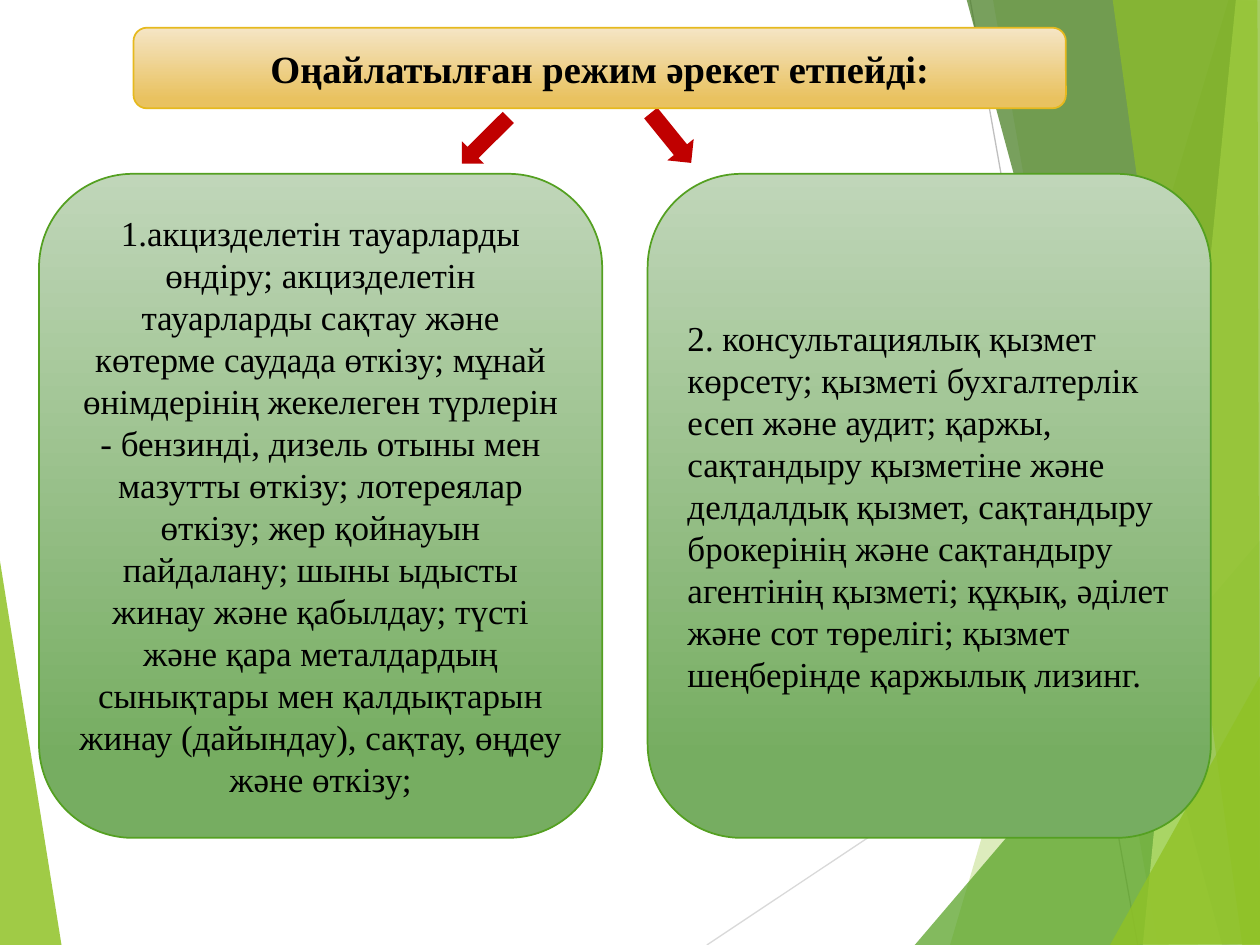
import lxml.etree
import pptx
import pptx.dml.color
import pptx.enum.shapes
import pptx.enum.text
import pptx.oxml.ns
import pptx.util

Inches = pptx.util.Inches
RGBColor = pptx.dml.color.RGBColor
Shape = pptx.enum.shapes.MSO_SHAPE
Align = pptx.enum.text.PP_ALIGN

LIME = RGBColor(0x90, 0xC2, 0x26)
PALE_LIME = RGBColor(0xC0, 0xE4, 0x74)
GREEN = RGBColor(0x54, 0xA0, 0x21)
DARK_GREEN = RGBColor(0x3F, 0x78, 0x19)
LIGHT_GREY = RGBColor(0xD9, 0xD9, 0xD9)
GREY = RGBColor(0xBF, 0xBF, 0xBF)
PANEL_TOP = RGBColor(0xC0, 0xD6, 0xB9)
PANEL_BOTTOM = RGBColor(0x76, 0xAD, 0x61)
HEADER_TOP = RGBColor(0xF5, 0xE5, 0xC5)
HEADER_BOTTOM = RGBColor(0xE9, 0xC2, 0x60)
GOLD = RGBColor(0xE6, 0xB9, 0x1E)
RED = RGBColor(0xC0, 0x00, 0x00)
BLACK = RGBColor(0x00, 0x00, 0x00)
FONT = "Times New Roman"

TITLE = "Оңайлатылған режим әрекет етпейді:"
GOODS = (
    "1.акцизделетін тауарларды өндіру; акцизделетін тауарларды сақтау және "
    "көтерме саудада өткізу; мұнай өнімдерінің жекелеген түрлерін - бензинді, "
    "дизель отыны мен мазутты өткізу; лотереялар өткізу; жер қойнауын "
    "пайдалану; шыны ыдысты жинау және қабылдау; түсті және қара металдардың "
    "сынықтары мен қалдықтарын жинау (дайындау), сақтау, өңдеу және өткізу;"
)
SERVICES = (
    "2. консультациялық қызмет көрсету; қызметі бухгалтерлік есеп және аудит; "
    "қаржы, сақтандыру қызметіне және делдалдық қызмет, сақтандыру брокерінің "
    "және сақтандыру агентінің қызметі; құқық, әділет және сот төрелігі; "
    "қызмет шеңберінде қаржылық лизинг."
)

RAYS = [
    ((5.61, 7.5), (10.01, 4.57), LIGHT_GREY),
    ((7.7, 0), (9.03, 7.5), GREY),
]
LEFT_FACET = ([(-0.01, 4.39), (0.49, 7.51), (-0.01, 7.5)], LIME, 85)
RIGHT_FACETS = [
    ([(9.75, 0), (7.54, 7.5), (10.02, 7.51), (10.01, 0.01)], LIME, 30),
    ([(7.88, -0.01), (9.19, 7.5), (10.01, 7.5), (10.01, -0.01)], LIME, 20),
    ([(7.26, 7.5), (10, 4.29), (10.01, 7.5)], GREEN, 72),
    ([(7.67, -0.01), (9.7, 7.5), (10.01, 7.49), (10.01, -0.01)], DARK_GREEN, 70),
    ([(9.81, -0.01), (9.07, 7.5), (10.01, 7.5), (10, -0.01)], PALE_LIME, 70),
    ([(8.83, -0.01), (9.86, 7.5), (10, 7.5), (9.98, -0.01)], LIME, 65),
    ([(8.81, 7.5), (10.01, 5.35), (10.01, 7.49)], LIME, 80),
]


def add_facet(slide, left, top, points, color, opacity):
    """Draw one translucent polygon with points in inches from the given corner."""
    corners = [(Inches(left + x), Inches(top + y)) for x, y in points]
    builder = slide.shapes.build_freeform(*corners[0])
    builder.add_line_segments(corners[1:], close=True)
    facet = builder.convert_to_shape()
    facet.shadow.inherit = False
    facet.line.fill.background()
    facet.fill.solid()
    facet.fill.fore_color.rgb = color
    color_element = facet.fill._xPr.find(".//" + pptx.oxml.ns.qn("a:srgbClr"))
    alpha = lxml.etree.SubElement(color_element, pptx.oxml.ns.qn("a:alpha"))
    alpha.set("val", str(opacity * 1000))


def add_ray(slide, left, top, start, end, color):
    """Draw one thin background line."""
    ray = slide.shapes.add_connector(
        pptx.enum.shapes.MSO_CONNECTOR.STRAIGHT,
        *(Inches(value) for value in (
            left + start[0], top + start[1], left + end[0], top + end[1])),
    )
    ray.line.color.rgb = color
    ray.line.width = pptx.util.Pt(0.75)
    lxml.etree.SubElement(ray._element.spPr, pptx.oxml.ns.qn("a:effectLst"))


def add_backdrop(slide, left, top):
    """Draw the faceted decoration along both slide edges."""
    add_facet(slide, left, top, *LEFT_FACET)
    for ray in RAYS:
        add_ray(slide, left, top, *ray)
    for facet in RIGHT_FACETS:
        add_facet(slide, left, top, *facet)


def add_plate(slide, box, top_color, bottom_color, line_color):
    """Draw a rounded rectangle with a vertical gradient."""
    plate = slide.shapes.add_shape(Shape.ROUNDED_RECTANGLE, *map(Inches, box))
    plate.shadow.inherit = False
    plate.fill.gradient()
    plate.fill.gradient_angle = 270
    stops = plate.fill.gradient_stops
    for stop, color, position in zip(stops, (top_color, bottom_color), (0, 0.88)):
        stop.color.rgb = color
        stop.position = position
    plate.line.color.rgb = line_color
    plate.line.width = pptx.util.Pt(1)
    return plate


def write_text(shape, text, size, alignment, bold=False):
    """Set and format the single paragraph of a shape."""
    frame = shape.text_frame
    frame.text = text
    frame.word_wrap = True
    frame.vertical_anchor = pptx.enum.text.MSO_ANCHOR.MIDDLE
    paragraph = frame.paragraphs[0]
    paragraph.alignment = alignment
    font = paragraph.runs[0].font
    font.name = FONT
    font.size = pptx.util.Pt(size)
    font.bold = bold
    font.color.rgb = BLACK


def add_panel(slide, box, text, alignment):
    """Place one green panel with its text."""
    panel = add_plate(slide, box, PANEL_TOP, PANEL_BOTTOM, GREEN)
    write_text(panel, text, 20, alignment)


def add_arrow(slide, box, rotation):
    """Place one red arrow turned towards its panel."""
    arrow = slide.shapes.add_shape(Shape.LEFT_ARROW, *map(Inches, box))
    arrow.rotation = rotation
    arrow.shadow.inherit = False
    arrow.fill.solid()
    arrow.fill.fore_color.rgb = RED
    arrow.line.fill.background()


def add_header(slide, box):
    """Place the title on its golden plate."""
    add_plate(slide, box, HEADER_TOP, HEADER_BOTTOM, GOLD)
    title = slide.shapes.title
    title.left, title.top, title.width, title.height = map(Inches, box)
    write_text(title, TITLE, 22, Align.CENTER, bold=True)
    slide.shapes._spTree.append(title._element)


def main():
    """Build and save the slide."""
    presentation = pptx.Presentation()
    presentation.slide_width = Inches(10)
    presentation.slide_height = Inches(7.5)
    slide = presentation.slides.add_slide(presentation.slide_layouts[5])
    add_backdrop(slide, 0, 0)
    add_panel(slide, (0.31, 1.38, 4.47, 5.27), GOODS, Align.CENTER)
    add_panel(slide, (5.14, 1.38, 4.47, 5.27), SERVICES, Align.LEFT)
    add_arrow(slide, (3.59, 0.99, 0.52, 0.25), 315.2)
    add_arrow(slide, (5.07, 0.96, 0.51, 0.27), 231)
    add_header(slide, (1.06, 0.22, 7.4, 0.64))
    presentation.save("out.pptx")


if __name__ == "__main__":
    main()
